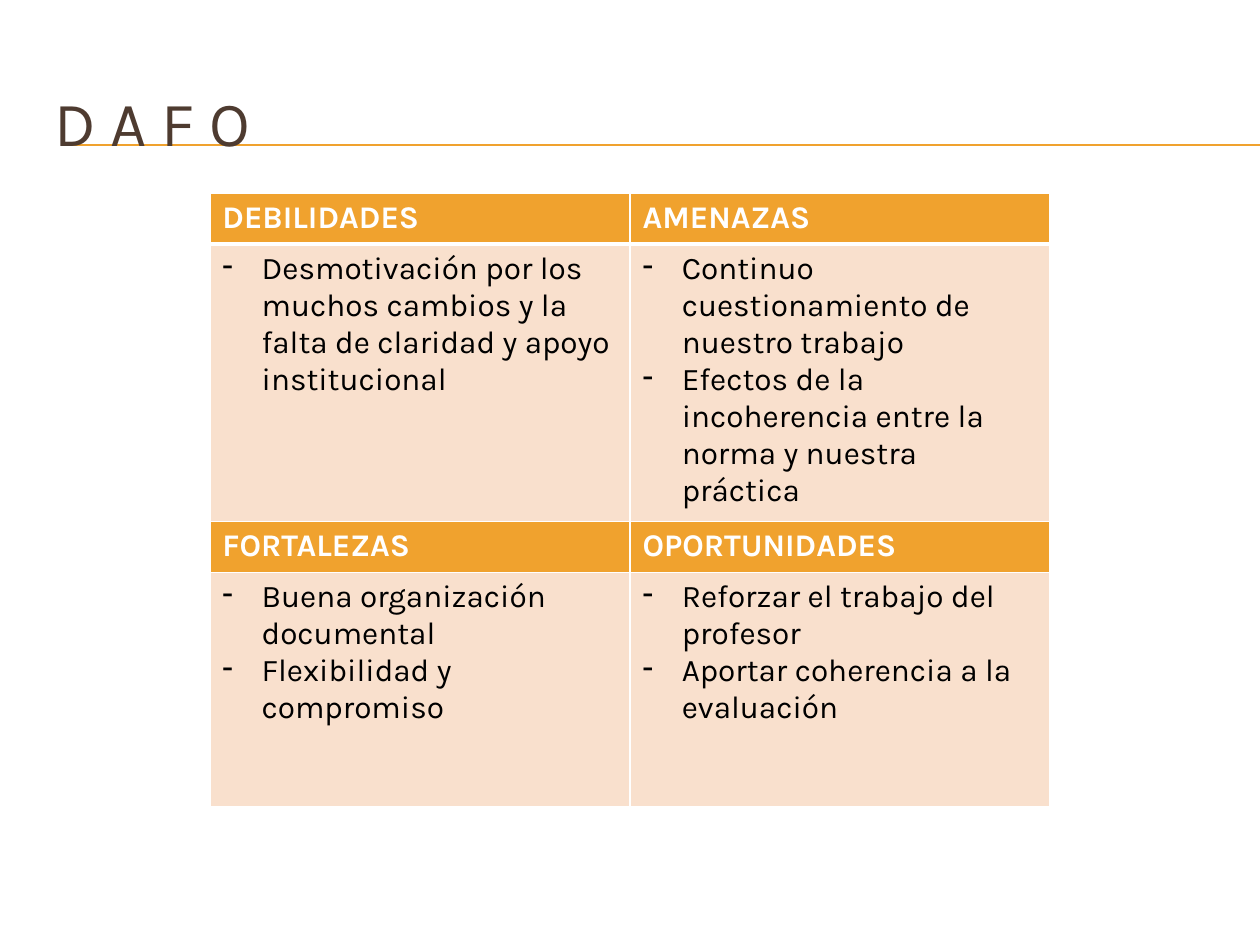
from dataclasses import dataclass

from lxml.etree import SubElement
from pptx import Presentation
from pptx.dml.color import RGBColor
from pptx.enum.shapes import MSO_CONNECTOR
from pptx.enum.text import MSO_ANCHOR
from pptx.oxml import parse_xml
from pptx.oxml.ns import nsdecls, qn
from pptx.util import Cm, Pt

FONT = "Karla"
COLORS = {"gold": "F0A22E", "peach": "F9E0CD", "brown": "4E3B30",
          "white": "FFFFFF", "black": "000000"}


@dataclass
class Part:
    """One quarter of the DAFO grid: a heading and its points."""
    head: str
    points: list[str]


PARTS = [
    Part("DEBILIDADES", ["Desmotivación por los muchos cambios y la falta de "
                         "claridad y apoyo institucional"]),
    Part("AMENAZAS", ["Continuo cuestionamiento de nuestro trabajo",
                      "Efectos de la incoherencia entre la norma y nuestra práctica"]),
    Part("FORTALEZAS", ["Buena organización documental",
                        "Flexibilidad y compromiso"]),
    Part("OPORTUNIDADES", ["Reforzar el trabajo del profesor",
                           "Aportar coherencia a la evaluación"]),
]
ROWS = [1.03, 5.48, 1.03, 4.72]
WIDTH = 8.47


def color(name: str) -> RGBColor:
    return RGBColor.from_string(COLORS[name])


def add_run(para, text: str, size: int, tint: str, bold: bool = False) -> None:
    run = para.add_run()
    run.text = text
    font = run.font
    font.name, font.size, font.bold = FONT, Pt(size), bold
    font.color.rgb = color(tint)


def add_rule(slide, y: float) -> None:
    line = slide.shapes.add_connector(
        MSO_CONNECTOR.STRAIGHT, Cm(1.42), Cm(y), Cm(25.4), Cm(y))
    line.line.color.rgb = color("gold")
    line.line.width = Pt(0.75)
    SubElement(line._element.spPr, qn("a:effectLst"))


def add_title(slide, text: str) -> None:
    box = slide.shapes.add_textbox(Cm(0.84), Cm(1.27), Cm(24.13), Cm(2.34))
    frame = box.text_frame
    frame.word_wrap = True
    frame.vertical_anchor = MSO_ANCHOR.MIDDLE
    add_run(frame.paragraphs[0], text, 36, "brown")


def set_dash(para) -> None:
    """Give the paragraph a hanging dash bullet."""
    props = para._p.get_or_add_pPr()
    props.set("marL", str(Cm(0.79)))
    props.set("indent", str(-Cm(0.79)))
    SubElement(props, qn("a:buChar")).set("char", "-")


def set_edges(cell, top: int, low: int) -> None:
    """Draw white borders; top and low are widths in points."""
    props = cell._tc.get_or_add_tcPr()
    edges = {"lnL": 1, "lnR": 1, "lnT": top, "lnB": low}
    for spot, (tag, width) in enumerate(edges.items()):
        props.insert(spot, parse_xml(
            f'<a:{tag} {nsdecls("a")} w="{Pt(width)}"><a:solidFill>'
            f'<a:srgbClr val="{COLORS["white"]}"/></a:solidFill></a:{tag}>'))


def fill_cell(cell, tint: str, top: int, low: int) -> None:
    cell.fill.solid()
    cell.fill.fore_color.rgb = color(tint)
    set_edges(cell, top, low)


def add_part(table, part: Part, row: int, col: int) -> None:
    thick = 3 if row == 0 else 1
    head, body = table.cell(row, col), table.cell(row + 1, col)
    fill_cell(head, "gold", 1, thick)
    fill_cell(body, "peach", thick, 1)
    add_run(head.text_frame.paragraphs[0], part.head, 18, "white", True)
    frame = body.text_frame
    for spot, point in enumerate(part.points):
        para = frame.add_paragraph() if spot else frame.paragraphs[0]
        set_dash(para)
        add_run(para, point, 18, "black")


def add_grid(slide) -> None:
    table = slide.shapes.add_table(
        len(ROWS), 2, Cm(4.23), Cm(3.89), Cm(2 * WIDTH), Cm(sum(ROWS))).table
    for col in table.columns:
        col.width = Cm(WIDTH)
    for row, height in zip(table.rows, ROWS):
        row.height = Cm(height)
    for spot, part in enumerate(PARTS):
        add_part(table, part, spot // 2 * 2, spot % 2)


def main() -> None:
    deck = Presentation()
    deck.slide_width, deck.slide_height = Cm(25.4), Cm(19.05)
    slide = deck.slides.add_slide(deck.slide_layouts[6])
    for y in (2.92, 2.94):
        add_rule(slide, y)
    add_title(slide, "D A F O")
    add_grid(slide)
    deck.save("out.pptx")


if __name__ == "__main__":
    main()
